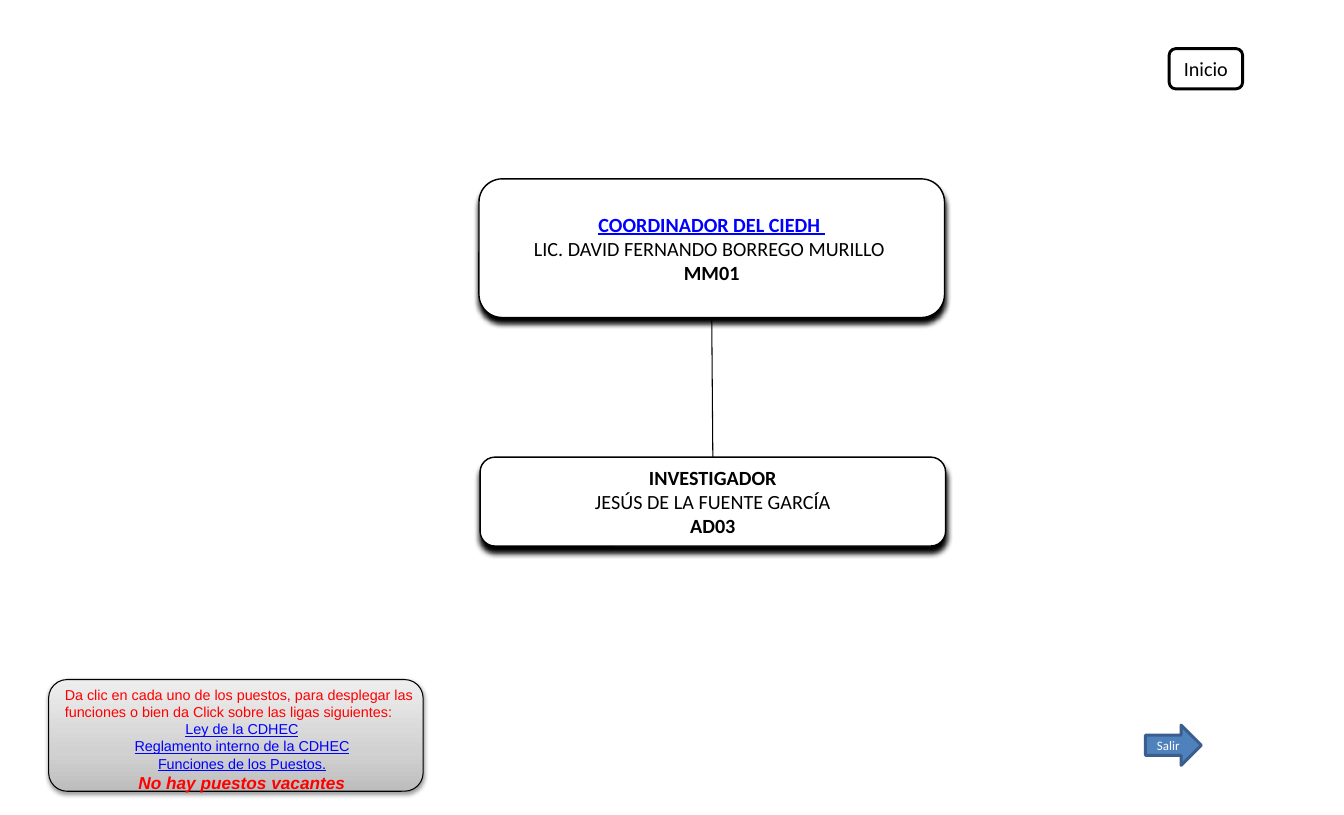
from copy import deepcopy

from lxml.etree import SubElement
from pptx import Presentation
from pptx.dml.color import RGBColor
from pptx.enum.shapes import MSO_CONNECTOR as CONN, MSO_SHAPE as SHAPE
from pptx.enum.text import MSO_ANCHOR as ANCHOR, PP_ALIGN as ALIGN
from pptx.oxml.ns import qn
from pptx.util import Inches, Pt

BLACK = RGBColor(0x00, 0x00, 0x00)
WHITE = RGBColor(0xFF, 0xFF, 0xFF)
BLUE = RGBColor(0x00, 0x00, 0xFF)
RED = RGBColor(0xFF, 0x00, 0x00)
ARROW_FILL = RGBColor(0x4F, 0x81, 0xBD)
ARROW_LINE = RGBColor(0x3A, 0x5F, 0x8C)
GREYS = [(0, RGBColor(0xBD, 0xBD, 0xBD)),
         (0.35, RGBColor(0xD1, 0xD1, 0xD1)),
         (1, RGBColor(0xEE, 0xEE, 0xEE))]

SLIDE_W, SLIDE_H = Inches(12.99), Inches(7.88)


def area(left, top, width, height):
    return (round(SLIDE_W * left / 100), round(SLIDE_H * top / 100),
            round(SLIDE_W * width / 100), round(SLIDE_H * height / 100))


def add_box(slide, kind, box, fill, line, weight):
    sp = slide.shapes.add_shape(kind, *box)
    sp.shadow.inherit = False
    if fill:
        sp.fill.solid()
        sp.fill.fore_color.rgb = fill
    sp.line.color.rgb = line
    sp.line.width = Pt(weight)
    return sp


def add_shadow(sp, alpha, blur, dist):
    effects = sp._element.spPr.find(qn("a:effectLst"))
    shadow = SubElement(effects, qn("a:outerShdw"), blurRad=str(Pt(blur)),
                        dist=str(Pt(dist)), dir="5400000", algn="t", rotWithShape="0")
    color = SubElement(shadow, qn("a:srgbClr"), val=str(BLACK))
    SubElement(color, qn("a:alpha"), val=str(alpha * 1000))


def write(tf, lines, font, size, color=BLACK, align=ALIGN.CENTER):
    tf.text = "\n".join(text for text, _ in lines)
    for p, (_, style) in zip(tf.paragraphs, lines):
        p.alignment = style.get("align", align)
        f = p.runs[0].font
        f.name = font
        f.size = Pt(style.get("size", size))
        f.color.rgb = style.get("color", color)
        f.bold = style.get("bold", False)
        f.italic = style.get("italic", False)
        f.underline = style.get("underline", False)


def add_post(slide, box, title, person, level, **title_style):
    sp = add_box(slide, SHAPE.ROUNDED_RECTANGLE, box, WHITE, BLACK, 1)
    add_shadow(sp, 100, 4, 4)
    tf = sp.text_frame
    tf.word_wrap = False
    tf.vertical_anchor = ANCHOR.MIDDLE
    tf.margin_left = tf.margin_right = Inches(0.17)
    tf.margin_top = tf.margin_bottom = Inches(0.09)
    write(tf, [(title, dict(bold=True, **title_style)), (person, {}),
               (level, dict(bold=True))], "Calibri", 14)
    return sp


def add_button(slide, kind, box, text, size, fill, line, color):
    sp = add_box(slide, kind, box, fill, line, 2)
    tf = sp.text_frame
    tf.word_wrap = False
    tf.vertical_anchor = ANCHOR.MIDDLE
    write(tf, [(text, {})], "Calibri", size, color)


def add_legend(slide, box):
    panel = add_box(slide, SHAPE.ROUNDED_RECTANGLE, box, None, BLACK, 0.75)
    panel.fill.gradient()
    panel.fill.gradient_angle = 90
    stops = panel._element.spPr.find(qn("a:gradFill")).find(qn("a:gsLst"))
    stops.append(deepcopy(stops[0]))
    for stop, (position, grey) in zip(panel.fill.gradient_stops, GREYS):
        stop.position = position
        stop.color.rgb = grey
    add_shadow(panel, 38, 3.1, 1.6)

    left, top, width, height = box
    tb = slide.shapes.add_textbox(left + round(width * 0.016), top + round(height * 0.01),
                                  width, round(height * 1.05))
    tb.text_frame.word_wrap = True
    link = dict(color=BLUE, underline=True)
    write(tb.text_frame, [
        ("Da clic en cada uno de los puestos, para desplegar las funciones "
         "o bien da Click sobre las ligas siguientes:", dict(align=ALIGN.LEFT)),
        ("Ley de la CDHEC", link),
        ("Reglamento interno de la CDHEC", link),
        ("Funciones de los Puestos.", link),
        ("No hay puestos vacantes", dict(size=12, bold=True, italic=True)),
    ], "Arial", 10, RED)


def join(slide, upper, lower):
    line = slide.shapes.add_connector(CONN.STRAIGHT, 0, 0, 0, 0)
    line.begin_connect(upper, 2)
    line.end_connect(lower, 0)
    line.line.color.rgb = BLACK
    line.line.width = Pt(0.75)
    SubElement(line._element.spPr, qn("a:effectLst"))


def main():
    prs = Presentation()
    prs.slide_width, prs.slide_height = SLIDE_W, SLIDE_H
    slide = prs.slides.add_slide(prs.slide_layouts[6])

    coordinator = add_post(slide, area(35.64, 21.95, 34.64, 17.01),
                           "COORDINADOR DEL CIEDH ",
                           "LIC. DAVID FERNANDO BORREGO MURILLO ", "MM01",
                           color=BLUE, underline=True)
    add_button(slide, SHAPE.ROUNDED_RECTANGLE, area(86.99, 5.96, 5.47, 4.95),
               "Inicio", 14, WHITE, BLACK, BLACK)
    add_legend(slide, area(3.62, 83.38, 27.87, 13.71))
    add_button(slide, SHAPE.RIGHT_ARROW, area(85.22, 88.96, 4.16, 4.95),
               "Salir", 9, ARROW_FILL, ARROW_LINE, WHITE)
    researcher = add_post(slide, area(35.72, 56.09, 34.64, 10.91),
                          "INVESTIGADOR", "JESÚS DE LA FUENTE GARCÍA", "AD03")
    join(slide, coordinator, researcher)

    prs.save("out.pptx")


if __name__ == "__main__":
    main()
